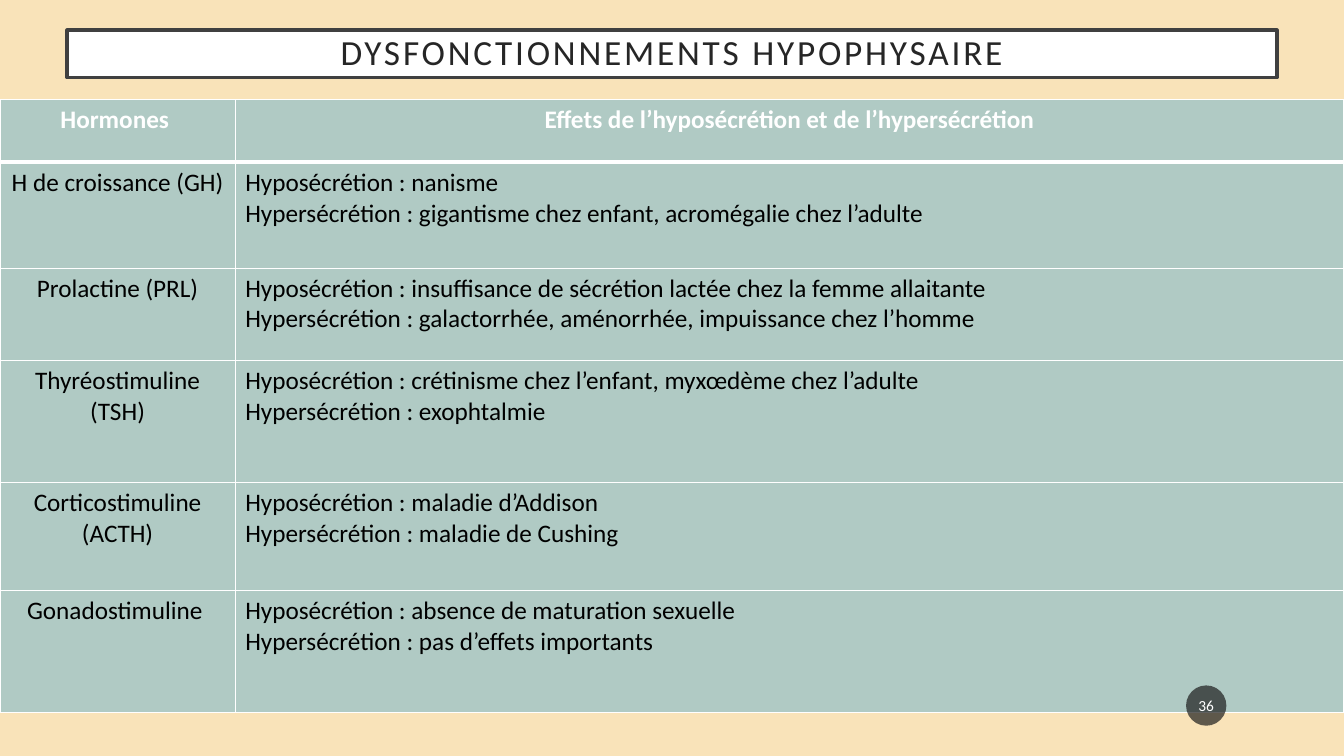
from lxml.etree import SubElement
from pptx import Presentation
from pptx.dml.color import RGBColor
from pptx.enum.shapes import MSO_SHAPE
from pptx.enum.text import MSO_ANCHOR, MSO_AUTO_SIZE, PP_ALIGN
from pptx.oxml.ns import qn
from pptx.util import Inches, Pt

GRID_COLUMNS, GRID_ROWS = 100, 75
HORMONES = [
    (["H de croissance (GH)"], "nanisme",
     "gigantisme chez enfant, acromégalie chez l’adulte"),
    (["Prolactine (PRL)"], "insuffisance de sécrétion lactée chez la femme allaitante",
     "galactorrhée, aménorrhée, impuissance chez l’homme"),
    (["Thyréostimuline (TSH)"], "crétinisme chez l’enfant, myxœdème chez l’adulte",
     "exophtalmie"),
    (["Corticostimuline", "(ACTH)"], "maladie d’Addison", "maladie de Cushing"),
    (["Gonadostimuline "], "absence de maturation sexuelle", "pas d’effets importants"),
]


def rgb(value):
    return RGBColor.from_string(value)


def assign(target, values):
    for name, value in values.items():
        setattr(target, name, value)


class Deck:
    font = "Calibri"
    cell_fill = "B0CAC4"
    white = "FFFFFF"

    def __init__(self):
        self.prs = Presentation()
        assign(self.prs, {"slide_width": Inches(13.33), "slide_height": Inches(7.5)})
        self.s = self.prs.slides.add_slide(self.prs.slide_layouts[5])
        self.fill(self.s.background, "F9E3B9")

    def x(self, columns):
        return round(self.prs.slide_width * columns / GRID_COLUMNS)

    def y(self, rows):
        return round(self.prs.slide_height * rows / GRID_ROWS)

    def box(self, left, top, width, height):
        return self.x(left), self.y(top), self.x(width), self.y(height)

    def fill(self, target, color):
        target.fill.solid()
        target.fill.fore_color.rgb = rgb(color)

    def text(self, tf, lines, size, color, align, bold=False):
        tf.word_wrap = True
        for i, line in enumerate(lines):
            p = tf.paragraphs[0] if i == 0 else tf.add_paragraph()
            p.alignment = align
            r = p.add_run()
            r.text = line
            assign(r.font, {"name": self.font, "size": Pt(size), "bold": bold})
            r.font.color.rgb = rgb(color)

    def title(self, text, area):
        sp = self.s.shapes.title
        assign(sp, dict(zip(("left", "top", "width", "height"), self.box(*area))))
        self.fill(sp, self.white)
        sp.line.color.rgb = rgb("404040")
        sp.line.width = Pt(2.5)
        tf = sp.text_frame
        margins = ("margin_left", "margin_top", "margin_right", "margin_bottom")
        assign(tf, dict.fromkeys(margins, Inches(0.2)))
        assign(tf, {"vertical_anchor": MSO_ANCHOR.MIDDLE, "auto_size": MSO_AUTO_SIZE.NONE})
        self.text(tf, [text], 25.2, "262626", PP_ALIGN.CENTER)
        p = tf.paragraphs[0]
        p.line_spacing = 0.9
        p.runs[0].font._element.set("spc", "200")

    def borders(self, cell, widths):
        tcPr = cell._tc.get_or_add_tcPr()
        for side, width in widths.items():
            ln = SubElement(tcPr, qn(f"a:ln{side}"), w=str(Pt(width)))
            SubElement(SubElement(ln, qn("a:solidFill")), qn("a:srgbClr"), val=self.white)

    def table(self, rows, area, widths, heights):
        table = self.s.shapes.add_table(len(rows), len(widths), *self.box(*area)).table
        table.horz_banding = False
        for column, width in zip(table.columns, widths):
            column.width = self.x(width)
        for i, (row, height) in enumerate(zip(rows, heights)):
            table.rows[i].height = self.y(height)
            for j, lines in enumerate(row):
                cell = table.cell(i, j)
                header = i == 0
                self.borders(cell, {"L": 1, "R": 1, "T": 3 if i == 1 else 1,
                                    "B": 3 if header else 1})
                self.fill(cell, self.cell_fill)
                align = PP_ALIGN.CENTER if header or j == 0 else PP_ALIGN.LEFT
                self.text(cell.text_frame, lines, 18,
                          self.white if header else "000000", align, header)

    def badge(self, text, area):
        sp = self.s.shapes.add_shape(MSO_SHAPE.OVAL, *self.box(*area))
        sp.shadow.inherit = False
        self.fill(sp, "1D1D1D")
        color = sp._element.spPr.find(f".//{qn('a:srgbClr')}")
        SubElement(color, qn("a:alpha"), val="70000")
        sp.line.fill.background()
        tf = sp.text_frame
        assign(tf, {"margin_left": Inches(0.02), "margin_right": Inches(0.02),
                    "vertical_anchor": MSO_ANCHOR.MIDDLE})
        self.text(tf, [text], 11, self.white, PP_ALIGN.CENTER)


def main():
    deck = Deck()
    deck.title("DYSFONCTIONNEMENTS HYPOPHYSAIRE", (5, 3, 90, 4.7))
    rows = [(["Hormones "], ["Effets de l’hyposécrétion et de l’hypersécrétion"])]
    rows += [(name, [f"Hyposécrétion : {low}", f"Hypersécrétion : {high}"])
             for name, low, high in HORMONES]
    deck.table(rows, (0, 9.9, 100, 60.8), (17.5, 82.5),
               (6.2, 10.5, 9.2, 12.1, 10.7, 12.1))
    deck.badge("36", (88.25, 68, 3, 4))
    deck.prs.save("out.pptx")


if __name__ == "__main__":
    main()
